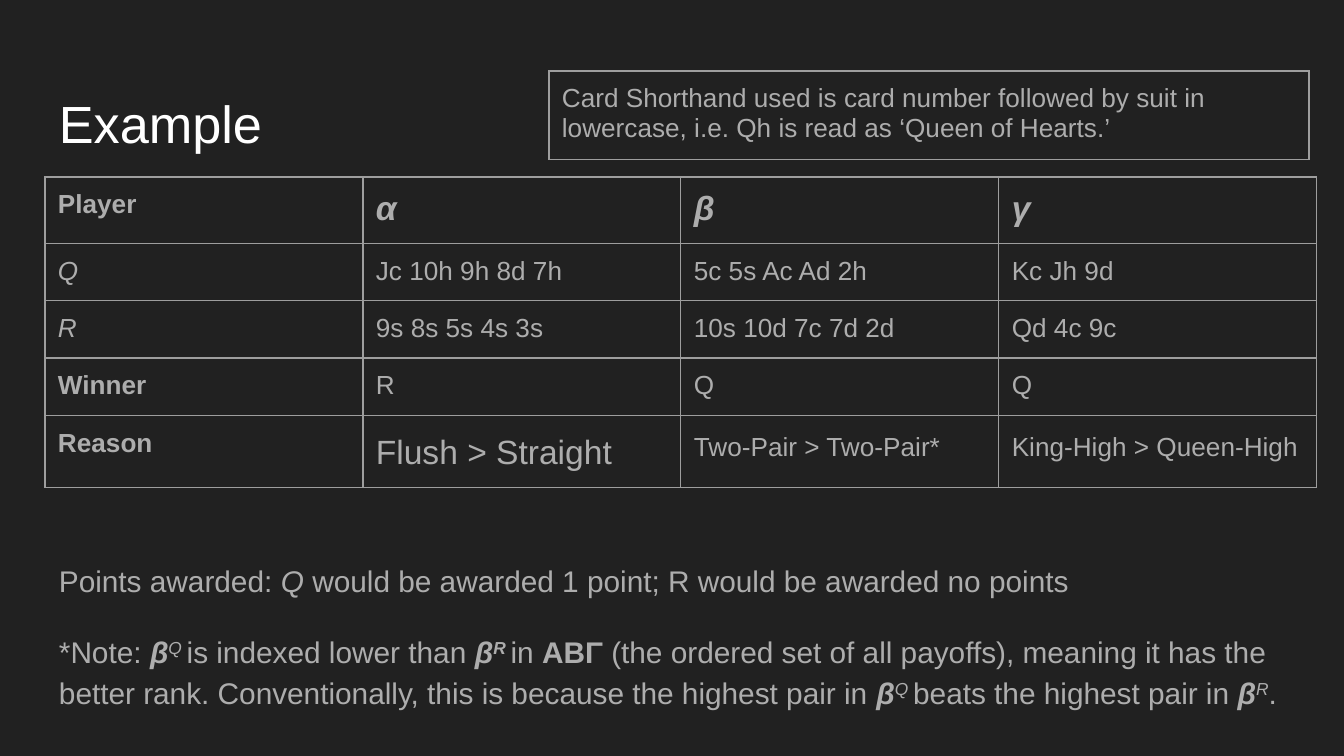
from lxml import etree
from pptx import Presentation
from pptx import util as u
from pptx.dml.color import RGBColor
from pptx.oxml.ns import qn

COLORS = {"background": "212121", "title": "FFFFFF", "text": "ADADAD", "border": "9E9E9E"}
FONT = "Arial"
PX = 914400 / 134.4
INSET = 13

# A run is (text, style): b bold, i italic, ^ superscript
TITLE = [("Example", "")]
SHORTHAND = ("Card Shorthand used is card number followed by suit in lowercase, "
             "i.e. Qh is read as ‘Queen of Hearts.’")
# A cell is (text, style, size, line spacing)
HANDS = [
    [("Player", "b", 14, 1), ("α", "bi", 18, 1), ("β", "bi", 18, 1), ("γ", "bi", 18, 1)],
    [("Q", "i", 14, 1), ("Jc 10h 9h 8d 7h", "", 14, 1),
     ("5c 5s Ac Ad 2h", "", 14, 1), ("Kc Jh 9d", "", 14, 1)],
    [("R", "i", 14, 1), ("9s 8s 5s 4s 3s", "", 14, 1),
     ("10s 10d 7c 7d 2d", "", 14, 1), ("Qd 4c 9c", "", 14, 1)],
    [("Winner", "b", 14, 1), ("R", "", 14, 1), ("Q", "", 14, 1), ("Q", "", 14, 1)],
    [("Reason", "b", 14, 1), ("Flush > Straight", "", 18, 1.15),
     ("Two-Pair > Two-Pair*", "", 14, 1.15), ("King-High > Queen-High", "", 14, 1.15)],
]
NOTES = [
    [("Points awarded: ", ""), ("Q", "i"),
     (" would be awarded 1 point; R would be awarded no points", "")],
    [("*Note: ", ""), ("β", "bi"), ("Q ", "i^"), ("is indexed lower than ", ""),
     ("β", "bi"), ("R ", "bi^"), ("in ", ""), ("ABΓ ", "b"),
     ("(the ordered set of all payoffs), meaning it has the better rank. "
      "Conventionally, this is because the highest pair in ", ""),
     ("β", "bi"), ("Q ", "i^"), ("beats the highest pair in ", ""),
     ("β", "bi"), ("R", "i^"), (".", "")],
]


def px(n):
    return u.Emu(round(n * PX))


def add_runs(p, runs, size, color="text", spacing=1):
    if spacing != 1:
        p.line_spacing = spacing
    for text, style in runs:
        r = p.add_run()
        r.text = text
        r.font.name, r.font.size = FONT, u.Pt(size)
        r.font.bold, r.font.italic = "b" in style, "i" in style
        r.font.color.rgb = RGBColor.from_string(COLORS[color])
        if "^" in style:
            r.font._element.set("baseline", "30000")


def set_margins(box, top=INSET):
    box.margin_left = box.margin_right = box.margin_bottom = px(INSET)
    box.margin_top = px(top)


def add_text(slide, frame, paragraphs, size, color="text", spacing=1, gap=0, top=INSET):
    tf = slide.shapes.add_textbox(*map(px, frame)).text_frame
    tf.word_wrap = True
    set_margins(tf, top)
    for i, runs in enumerate(paragraphs):
        p = tf.add_paragraph() if i else tf.paragraphs[0]
        if i:
            p.space_before = u.Pt(gap)
        add_runs(p, runs, size, color, spacing)


def add_borders(cell):
    tc_pr = cell._tc.get_or_add_tcPr()
    for i, side in enumerate(("lnL", "lnR", "lnT", "lnB")):
        ln = etree.Element(qn(f"a:{side}"), w=str(u.Pt(0.75)))
        fill = etree.SubElement(ln, qn("a:solidFill"))
        etree.SubElement(fill, qn("a:srgbClr"), val=COLORS["border"])
        tc_pr.insert(i, ln)


def add_grid(slide, left, top, col_width, row_heights, rows):
    cols = len(rows[0])
    table = slide.shapes.add_table(len(rows), cols, px(left), px(top),
                                   px(col_width * cols), px(sum(row_heights))).table
    table.first_row = table.horz_banding = False
    for col in table.columns:
        col.width = px(col_width)
    for row, height, cells in zip(table.rows, row_heights, rows):
        row.height = px(height)
        for cell, (text, style, size, spacing) in zip(row.cells, cells):
            set_margins(cell)
            cell.fill.background()
            add_borders(cell)
            add_runs(cell.text_frame.paragraphs[0], [(text, style)], size, spacing=spacing)


def main():
    prs = Presentation()
    prs.slide_width, prs.slide_height = px(1344), px(756)
    slide = prs.slides.add_slide(prs.slide_layouts[6])
    bg = slide.background.fill
    bg.solid()
    bg.fore_color.rgb = RGBColor.from_string(COLORS["background"])

    add_text(slide, (46, 544, 1277, 175), NOTES, 16, spacing=1.15, gap=16)
    add_text(slide, (46, 73, 1253, 85), [TITLE], 28, "title", top=18)
    add_grid(slide, 45, 177, 318, (64, 56, 56, 57, 70), HANDS)
    add_grid(slide, 549, 71, 760, (85,), [[(SHORTHAND, "", 14, 1)]])
    prs.save("out.pptx")


if __name__ == "__main__":
    main()
